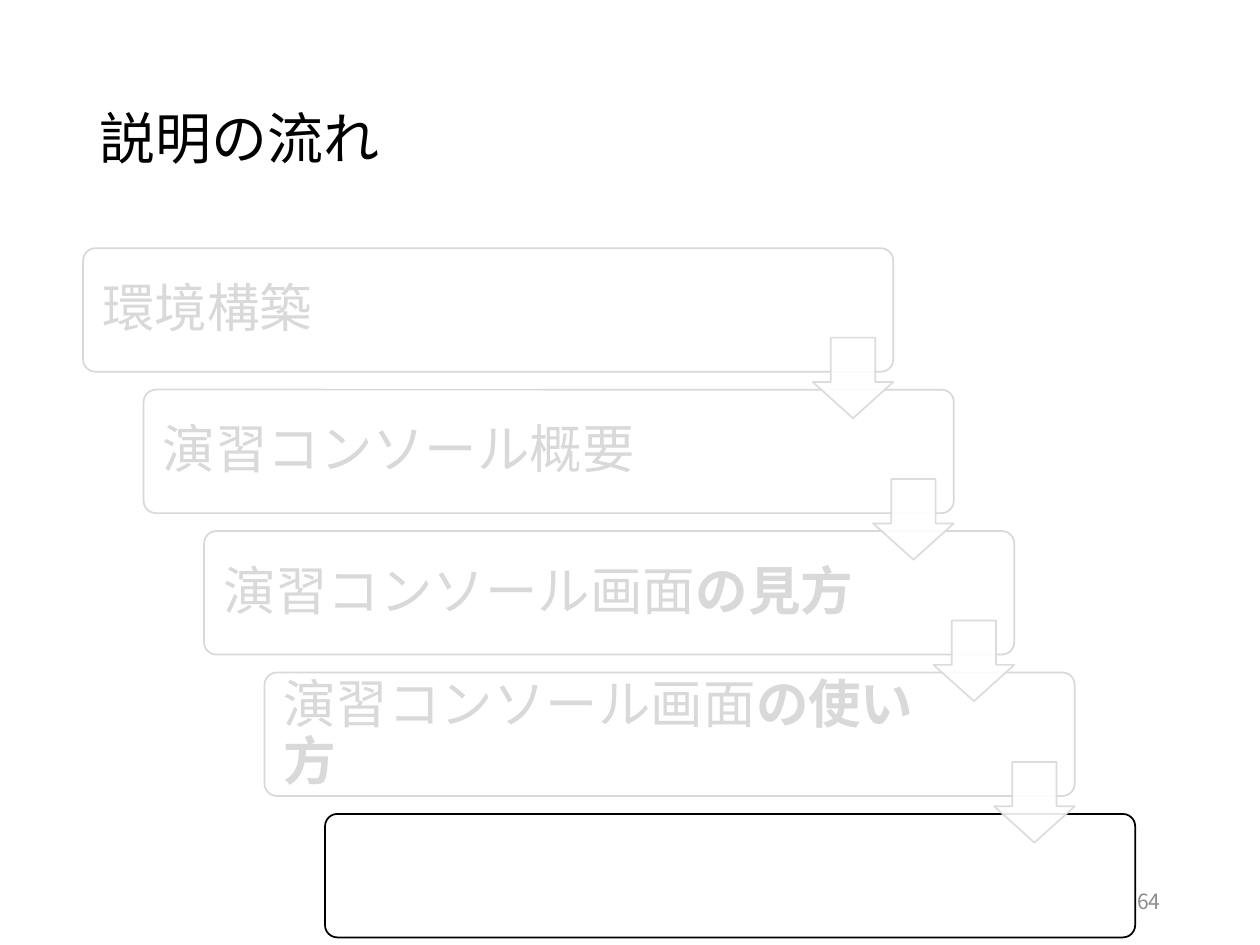
from dataclasses import dataclass

from lxml.etree import SubElement
from pptx import Presentation
from pptx.dml.color import RGBColor
from pptx.enum.shapes import MSO_SHAPE
from pptx.enum.text import MSO_ANCHOR, PP_ALIGN
from pptx.oxml.ns import qn
from pptx.util import Inches, Pt


@dataclass(frozen=True)
class Theme:
    """Colours, font and type sizes of the slide."""
    font: str = "Noto Sans CJK JP"
    ink: str = "000000"
    paper: str = "FFFFFF"
    faded: str = "D9D9D9"
    number: str = "8C8C8C"
    title_size: int = 32
    step_size: int = 30
    number_size: int = 12


THEME = Theme()
STEPS = [
    ("環境構築", ""),
    ("演習コンソール概要", ""),
    ("演習コンソール画面", "の見方"),
    ("演習コンソール画面", "の使い方"),
    ("", ""),
]


def add_text(s, box, parts, size, color, inset=(0.1, 0.05), spacing=None, align=PP_ALIGN.LEFT):
    """Add a middle-anchored text box from (text, bold) parts."""
    tf = s.shapes.add_textbox(*map(Inches, box)).text_frame
    tf.word_wrap = True
    tf.vertical_anchor = MSO_ANCHOR.MIDDLE
    tf.margin_left = tf.margin_right = Inches(inset[0])
    tf.margin_top = tf.margin_bottom = Inches(inset[1])
    p = tf.paragraphs[0]
    p.alignment = align
    p.line_spacing = spacing
    for text, bold in parts:
        r = p.add_run()
        r.text = text
        r.font.size = Pt(size)
        r.font.bold = bold
        r.font.color.rgb = RGBColor.from_string(color)
        r.font.name = THEME.font
        SubElement(r.font._element, qn("a:ea"), typeface=THEME.font)


def add_outlined(s, kind, box, line, adjustments, opacity=100):
    """Add a white outlined preset shape with the given opacity in percent."""
    sp = s.shapes.add_shape(kind, *map(Inches, box))
    sp.shadow.inherit = False
    for i, value in enumerate(adjustments):
        sp.adjustments[i] = value
    sp.fill.solid()
    sp.fill.fore_color.rgb = RGBColor.from_string(THEME.paper)
    sp.line.color.rgb = RGBColor.from_string(line)
    sp.line.width = Pt(1)
    if opacity < 100:
        for color in sp._element.spPr.iter(qn("a:srgbClr")):
            SubElement(color, qn("a:alpha"), val=str(opacity * 1000))


def add_staircase(s, box, steps):
    """Draw steps descending to the right, joined by overlapping arrows."""
    left, top, width, height = box
    step_w, step_h, arrow = 6.43, 0.98, 0.64
    dx = (width - step_w) / (len(steps) - 1)
    dy = (height - step_h) / (len(steps) - 1)
    corners = [(left + i * dx, top + i * dy) for i in range(len(steps))]
    for i, ((x, y), (plain, strong)) in enumerate(zip(corners, steps)):
        line = THEME.ink if i == len(steps) - 1 else THEME.faded
        add_outlined(s, MSO_SHAPE.ROUNDED_RECTANGLE, (x, y, step_w, step_h), line, [0.1])
        parts = [(t, b) for t, b in ((plain, False), (strong, True)) if t]
        if parts:
            add_text(s, (x + 0.03, y + 0.03, 5.25, 0.93), parts, THEME.step_size,
                     THEME.faded, inset=(0.12, 0.12), spacing=0.9)
    for x, y in corners[:-1]:
        add_outlined(s, MSO_SHAPE.DOWN_ARROW, (x + step_w - arrow, y + 0.71, arrow, arrow),
                     THEME.faded, [0.55, 0.45], opacity=90)


def add_title(s, box, text):
    """Add the slide title."""
    add_text(s, box, [(text, False)], THEME.title_size, THEME.ink, spacing=0.9)


def add_number(s, box, number):
    """Add the right-aligned slide number."""
    add_text(s, box, [(number, False)], THEME.number_size, THEME.number, align=PP_ALIGN.RIGHT)


def main():
    """Build and save the slide."""
    prs = Presentation()
    prs.slide_width, prs.slide_height = Inches(10), Inches(7.5)
    s = prs.slides.add_slide(prs.slide_layouts[6])
    add_title(s, (0.69, 0.4, 8.62, 1.45), "説明の流れ")
    add_number(s, (7.06, 6.95, 2.25, 0.4), "64")
    add_staircase(s, (0.66, 1.97, 8.35, 5.47), STEPS)
    prs.save("out.pptx")


if __name__ == "__main__":
    main()
